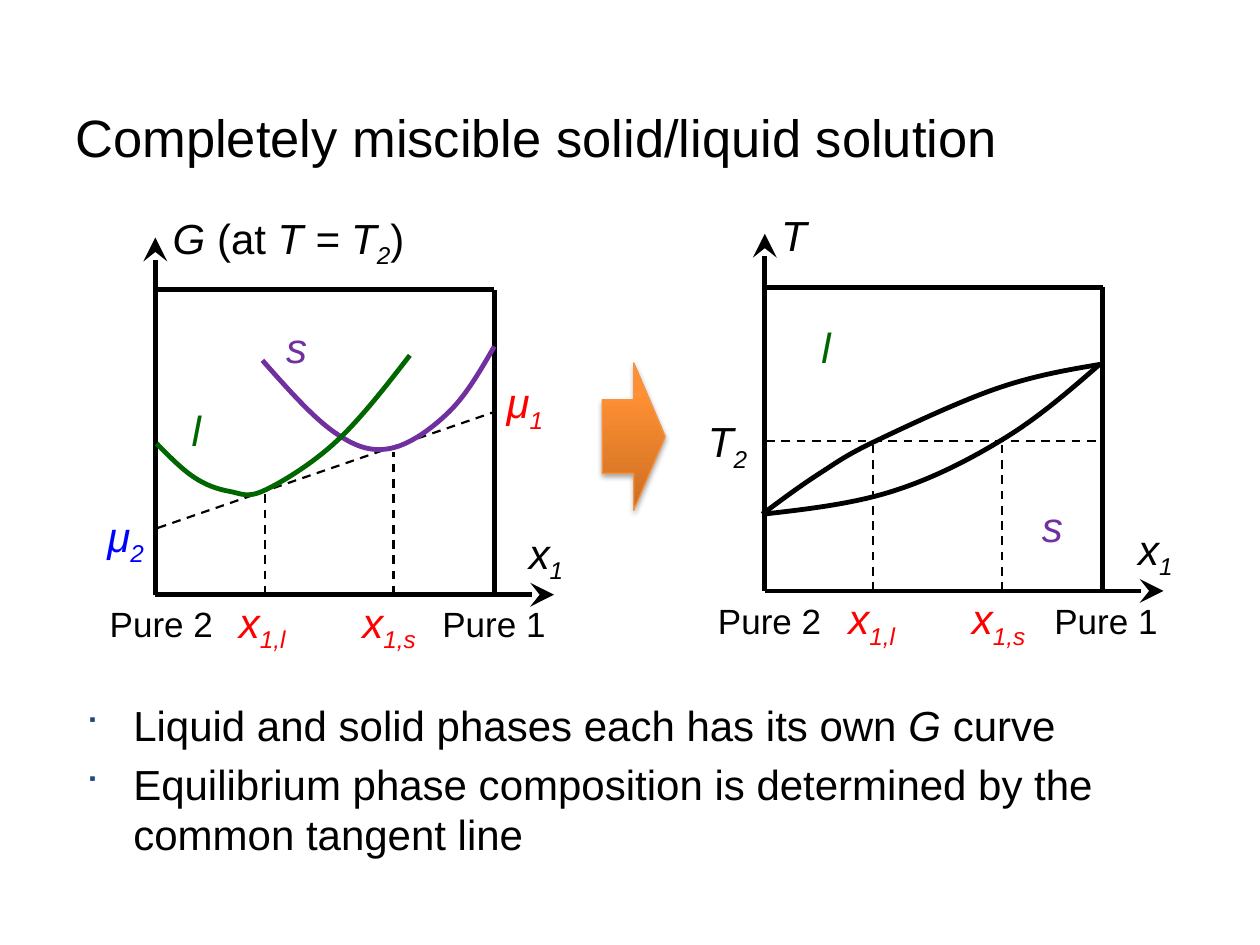
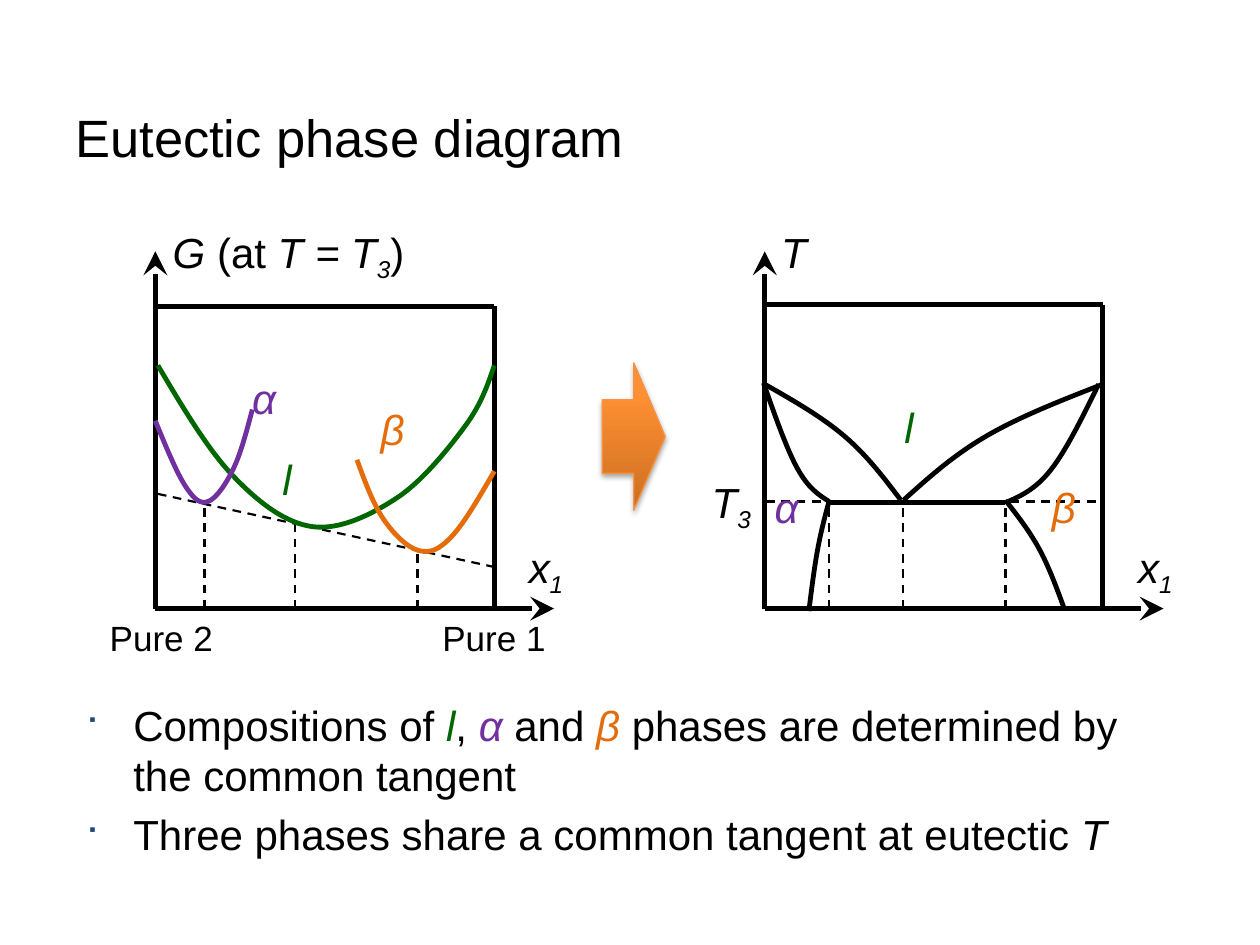
"""Build two slides that relate free energy curves to binary phase diagrams."""
from dataclasses import dataclass
from typing import NamedTuple

from lxml import etree
from pptx import Presentation
from pptx.dml.color import RGBColor
from pptx.enum.dml import MSO_LINE
from pptx.enum.shapes import MSO_CONNECTOR, MSO_SHAPE
from pptx.enum.text import MSO_ANCHOR, MSO_AUTO_SIZE
from pptx.oxml.ns import qn
from pptx.util import Inches, Pt

STRAIGHT = MSO_CONNECTOR.STRAIGHT
RIGHT_ARROW = MSO_SHAPE.RIGHT_ARROW
DASH = MSO_LINE.DASH
MIDDLE = MSO_ANCHOR.MIDDLE
FIT_SHAPE = MSO_AUTO_SIZE.SHAPE_TO_FIT_TEXT
SLIDE_WIDTH, SLIDE_HEIGHT = Inches(10), Inches(7.5)
CELL = SLIDE_WIDTH // 100
LEFT_COLUMN, RIGHT_COLUMN = 12.33, 60.7
LEFT_WIDTH, RIGHT_WIDTH = 26.9, 26.8
AXIS_WIDTH, AXIS_HEIGHT = 31.65, 28.35
Position = tuple[float, float]


@dataclass(frozen=True)
class Theme:
    font: str = "Arial"
    bullet_font: str = "Wingdings"
    ink: RGBColor = RGBColor(0, 0, 0)
    green: RGBColor = RGBColor(0, 0x66, 0)
    purple: RGBColor = RGBColor(0x70, 0x30, 0xA0)
    orange: RGBColor = RGBColor(0xE4, 0x6C, 0x0A)
    red: RGBColor = RGBColor(0xFF, 0, 0)
    blue: RGBColor = RGBColor(0, 0, 0xFF)
    bullet: str = "1F497D"
    arrow_fill: tuple[RGBColor, ...] = (RGBColor(0xCC, 0x6E, 0x20), RGBColor(0xFF, 0x90, 0x34))
    arrow_edge: RGBColor = RGBColor(0xF6, 0x92, 0x40)
    title_size: float = 30
    text_size: float = 24
    end_size: float = 20
    heavy: float = 2.75
    light: float = 1.25
    edge: float = 0.75


THEME = Theme()


class Run(NamedTuple):
    text: str
    italic: bool = False
    subscript: bool = False
    color: RGBColor = THEME.ink


class Label(NamedTuple):
    column: float
    row: float
    width: float
    runs: tuple[Run, ...]
    size: float = THEME.text_size


class Curve(NamedTuple):
    color: RGBColor
    knots: tuple[Position, ...]


class Line(NamedTuple):
    start: Position
    end: Position
    width: float = THEME.light
    dashed: bool = True
    arrow: bool = False


class Diagram(NamedTuple):
    origin: Position
    corner: Position
    curves: tuple[Curve, ...]
    lines: tuple[Line, ...]
    labels: tuple[Label, ...]


class Lesson(NamedTuple):
    title: str
    diagrams: tuple[Diagram, ...]
    bullets: tuple[tuple[Run, ...], ...]


def symbol(text: str, index: str = "", color: RGBColor = THEME.ink) -> tuple[Run, ...]:
    base = (Run(text, True, False, color),)
    return base + ((Run(index, True, True, color),) if index else ())


def drop(column: float, height: float) -> Line:
    return Line((column, 0), (column, height))


def energy_axis(index: str) -> Label:
    return Label(0.4, 30.85, 20.6, (*symbol("G "), Run("(at "), *symbol("T = T", index), Run(")")))


def pure_ends(first: float, last: float, row: float) -> tuple[Label, ...]:
    ends = ((first, "Pure 2"), (last, "Pure 1"))
    return tuple(Label(column, row, 10.3, (Run(text),), THEME.end_size) for column, text in ends)


LIQUID, SOLID = symbol("l", "", THEME.green), symbol("s", "", THEME.purple)
ALPHA, BETA = symbol("α", "", THEME.purple), symbol("β", "", THEME.orange)
TEMPERATURE_AXIS = Label(0.3, 30.8, 4.1, symbol("T"))
COMPOSITION_AXIS = Label(28.65, 5.85, 4.9, symbol("x", "1"))
COMPOSITIONS = (
    Label(5.65, 0.35, 6.1, symbol("x", "1,l", THEME.red)),
    Label(15.45, 0.35, 6.7, symbol("x", "1,s", THEME.red)),
)
MISCIBLE = Lesson(
    "Completely miscible solid/liquid solution",
    (
        Diagram(
            (LEFT_COLUMN, 47.2), (LEFT_WIDTH, 24.2),
            (
                Curve(THEME.purple, ((8.5, 18.6), (14.2, 12.9), (18.6, 11.6), (23.3, 14.5), (26.9, 19.7))),
                Curve(THEME.green, ((0.1, 12), (3.1, 9.3), (5.9, 8.2), (8.7, 8.3), (14.4, 12.2), (20.2, 19))),
            ),
            (Line((0.2, 5.3), (26.9, 14.5)), drop(8.7, 8), drop(18.9, 11.3)),
            (
                energy_axis("2"), *pure_ends(-4.6, 21.8, -0.1), *COMPOSITIONS,
                Label(26.9, 17.8, 5.2, symbol("μ", "1", THEME.red)),
                Label(-4.8, 7.2, 5.2, symbol("μ", "2", THEME.blue)),
                Label(1.9, 15.6, 2.8, LIQUID), Label(9.4, 22.2, 3.7, SOLID),
            ),
        ),
        Diagram(
            (RIGHT_COLUMN, 46.9), (RIGHT_WIDTH, 24.1),
            (
                Curve(THEME.ink, ((-0.2, 6.1), (4.3, 9.3), (8.8, 11.9), (18.5, 16.1), (26.7, 18))),
                Curve(THEME.ink, ((-0.1, 6.1), (10.1, 7.9), (19, 12.1), (26.6, 18))),
            ),
            (Line((0.1, 11.9), (26.8, 11.9)), drop(8.6, 11.9), drop(18.8, 12.1)),
            (
                TEMPERATURE_AXIS, *pure_ends(-4.7, 22, -0.2), *COMPOSITIONS,
                Label(-5.5, 14.4, 5.3, symbol("T", "2")),
                Label(3.5, 21.9, 2.8, LIQUID), Label(21, 7.7, 3.7, SOLID),
            ),
        ),
    ),
    (
        (Run("Liquid and solid phases each has its own "), *symbol("G"), Run(" curve")),
        (Run("Equilibrium phase composition is determined by the common tangent line"),),
    ),
)
EUTECTIC = Lesson(
    "Eutectic phase diagram",
    (
        Diagram(
            (LEFT_COLUMN, 48.3), (LEFT_WIDTH, 24),
            (
                Curve(THEME.green, ((0.2, 19.3), (6.2, 10.5), (12.5, 6.5), (19.2, 8.8), (24.6, 14.5), (26.9, 19.3))),
                Curve(THEME.purple, ((0, 14.9), (2.4, 9.7), (4.2, 8.5), (6.2, 11.1), (7.7, 15.8))),
                Curve(THEME.orange, ((26.9, 10.9), (23.5, 5.7), (20.9, 4.6), (18.1, 7.1), (16, 11.8))),
            ),
            (Line((0.2, 9.1), (26.9, 3.3)), drop(3.9, 8.4), drop(11.1, 6.8), drop(20.8, 4.7)),
            (
                energy_axis("3"), *pure_ends(-4.6, 21.8, -0.15),
                Label(9.1, 12.8, 2.8, LIQUID), Label(6.7, 19.2, 4.1, ALPHA), Label(16.9, 16.8, 3.9, BETA),
            ),
        ),
        Diagram(
            (RIGHT_COLUMN, 48.3), (RIGHT_WIDTH, 24.1),
            (
                Curve(THEME.ink, ((5.1, 8.5), (2.6, 11.1), (-0.1, 17.9))),
                Curve(THEME.ink, ((5.1, 8.5), (4.2, 4.7), (3.5, -0.2))),
                Curve(THEME.ink, ((19.1, 8.4), (22.7, 11), (26.5, 17.8))),
                Curve(THEME.ink, ((19.1, 8.6), (21.8, 4.7), (23.8, -0.1))),
                Curve(THEME.ink, ((0, 17.8), (6.3, 13.7), (10.8, 8.6))),
                Curve(THEME.ink, ((26.8, 17.8), (17.6, 13.7), (11, 8.6))),
            ),
            (
                Line((0.1, 8.5), (26.8, 8.5)), drop(5.1, 8.5), drop(11, 8.5), drop(19.1, 8.5),
                Line((5.1, 8.4), (19.1, 8.4), THEME.heavy, False),
            ),
            (
                TEMPERATURE_AXIS, Label(-5.2, 11, 5.3, symbol("T", "3")), Label(10.1, 16.9, 2.8, LIQUID),
                Label(-0.2, 10.6, 4.1, ALPHA), Label(21.8, 10.6, 3.9, BETA),
            ),
        ),
    ),
    (
        (
            Run("Compositions of "), *LIQUID, Run(", "), *ALPHA, Run(" and "), *BETA,
            Run(" phases are determined by the common tangent"),
        ),
        (Run("Three phases share a common tangent at eutectic "), *symbol("T")),
    ),
)


def cells(*values: float) -> list[int]:
    return [round(value * CELL) for value in values]


def place(diagram: Diagram, position: Position) -> list[int]:
    return cells(diagram.origin[0] + position[0], diagram.origin[1] - position[1])


def write_runs(paragraph, runs: tuple[Run, ...], size: float) -> None:
    for part in runs:
        run = paragraph.add_run()
        run.text = part.text
        run.font.name, run.font.size = THEME.font, Pt(size)
        run.font.italic, run.font.color.rgb = part.italic, part.color
        if part.subscript:
            run.font._element.set("baseline", "-25000")


def add_line(slide, diagram: Diagram, line: Line) -> None:
    connector = slide.shapes.add_connector(STRAIGHT, *place(diagram, line.start), *place(diagram, line.end))
    connector.line.color.rgb, connector.line.width = THEME.ink, Pt(line.width)
    if line.dashed:
        connector.line.dash_style = DASH
    if line.arrow:
        etree.SubElement(connector.line._ln, qn("a:tailEnd"), type="stealth", w="lg", len="lg")
    etree.SubElement(connector._element.spPr, qn("a:effectLst"))


def spline(knots: tuple[Position, ...]) -> list[Position]:
    slopes = [((c[0] - a[0]) / 6, (c[1] - a[1]) / 6) for a, c in zip(knots, knots[2:])]
    points = []
    for (x, y), (dx, dy) in zip(knots[1:-1], slopes):
        points += [(x - dx, y - dy), (x, y), (x + dx, y + dy)]
    first, last = (tuple((a + b) / 2 for a, b in zip(*pair)) for pair in ((knots[0], points[0]), (knots[-1], points[-1])))
    return [knots[0], first, *points, last, knots[-1]]


def add_curve(slide, diagram: Diagram, curve: Curve) -> None:
    start, *rest = [place(diagram, point) for point in spline(curve.knots)]
    builder = slide.shapes.build_freeform(*start)
    builder.add_line_segments(rest, close=False)
    shape = builder.convert_to_shape()
    segments = list(shape._element.spPr.iter(qn("a:lnTo")))
    for group in zip(*[iter(segments)] * 3):
        bezier = etree.SubElement(group[0].getparent(), qn("a:cubicBezTo"))
        for segment in group:
            bezier.append(segment[0])
            segment.getparent().remove(segment)
    shape.shadow.inherit = False
    shape.fill.background()
    shape.line.color.rgb, shape.line.width = curve.color, Pt(THEME.heavy)


def add_diagram(slide, diagram: Diagram) -> None:
    width, height = diagram.corner
    axes = [Line((0, 0), tip, THEME.heavy, False, True) for tip in ((0, AXIS_HEIGHT), (AXIS_WIDTH, 0))]
    frame = [Line(diagram.corner, foot, THEME.heavy, False) for foot in ((0.1, height), (width, 0))]
    for line in (*axes, *frame, *diagram.lines):
        add_line(slide, diagram, line)
    for curve in diagram.curves:
        add_curve(slide, diagram, curve)
    for label in (COMPOSITION_AXIS, *diagram.labels):
        box_height = 5 if label.size == THEME.text_size else 4.4
        box = slide.shapes.add_textbox(*place(diagram, label[:2]), *cells(label.width, box_height))
        box.text_frame.word_wrap, box.text_frame.auto_size = False, FIT_SHAPE
        write_runs(box.text_frame.paragraphs[0], label.runs, label.size)


def add_block_arrow(slide) -> None:
    shape = slide.shapes.add_shape(RIGHT_ARROW, *cells(47.8, 28.8, 5, 11.7))
    shape.fill.gradient()
    shape.fill.gradient_angle = 90
    for stop, color, position in zip(shape.fill.gradient_stops, THEME.arrow_fill, (0, 0.8)):
        stop.color.rgb, stop.position = color, position
    shape.line.color.rgb, shape.line.width = THEME.arrow_edge, Pt(THEME.edge)
    shape.shadow.inherit = False
    effects = shape._element.spPr.find(qn("a:effectLst"))
    shadow = etree.SubElement(effects, qn("a:outerShdw"), blurRad="40000", dist="23000", dir="5400000", rotWithShape="0")
    shade = etree.SubElement(shadow, qn("a:srgbClr"), val=str(THEME.ink))
    etree.SubElement(shade, qn("a:alpha"), val="35000")


def add_bullets(slide, bullets: tuple[tuple[Run, ...], ...]) -> None:
    frame = slide.shapes.add_textbox(*cells(5.8, 55, 86.7, 15)).text_frame
    frame.word_wrap = True
    for number, runs in enumerate(bullets):
        paragraph = frame.add_paragraph() if number else frame.paragraphs[0]
        properties = paragraph._p.get_or_add_pPr()
        properties.set("marL", str(Inches(0.38)))
        properties.set("indent", str(-Inches(0.38)))
        etree.SubElement(etree.SubElement(properties, qn("a:buClr")), qn("a:srgbClr"), val=THEME.bullet)
        etree.SubElement(properties, qn("a:buSzPct"), val="75000")
        etree.SubElement(properties, qn("a:buFont"), typeface=THEME.bullet_font)
        etree.SubElement(properties, qn("a:buChar"), char="■")
        paragraph.space_before = Pt(5 if number else 0)
        write_runs(paragraph, runs, THEME.text_size)


presentation = Presentation()
presentation.slide_width, presentation.slide_height = SLIDE_WIDTH, SLIDE_HEIGHT
for lesson in (MISCIBLE, EUTECTIC):
    slide = presentation.slides.add_slide(presentation.slide_layouts[6])
    title = slide.shapes.add_textbox(*cells(5, 5, 90, 11.7)).text_frame
    title.word_wrap, title.vertical_anchor = True, MIDDLE
    write_runs(title.paragraphs[0], (Run(lesson.title),), THEME.title_size)
    for diagram in lesson.diagrams:
        add_diagram(slide, diagram)
    add_block_arrow(slide)
    add_bullets(slide, lesson.bullets)
presentation.save("out.pptx")
